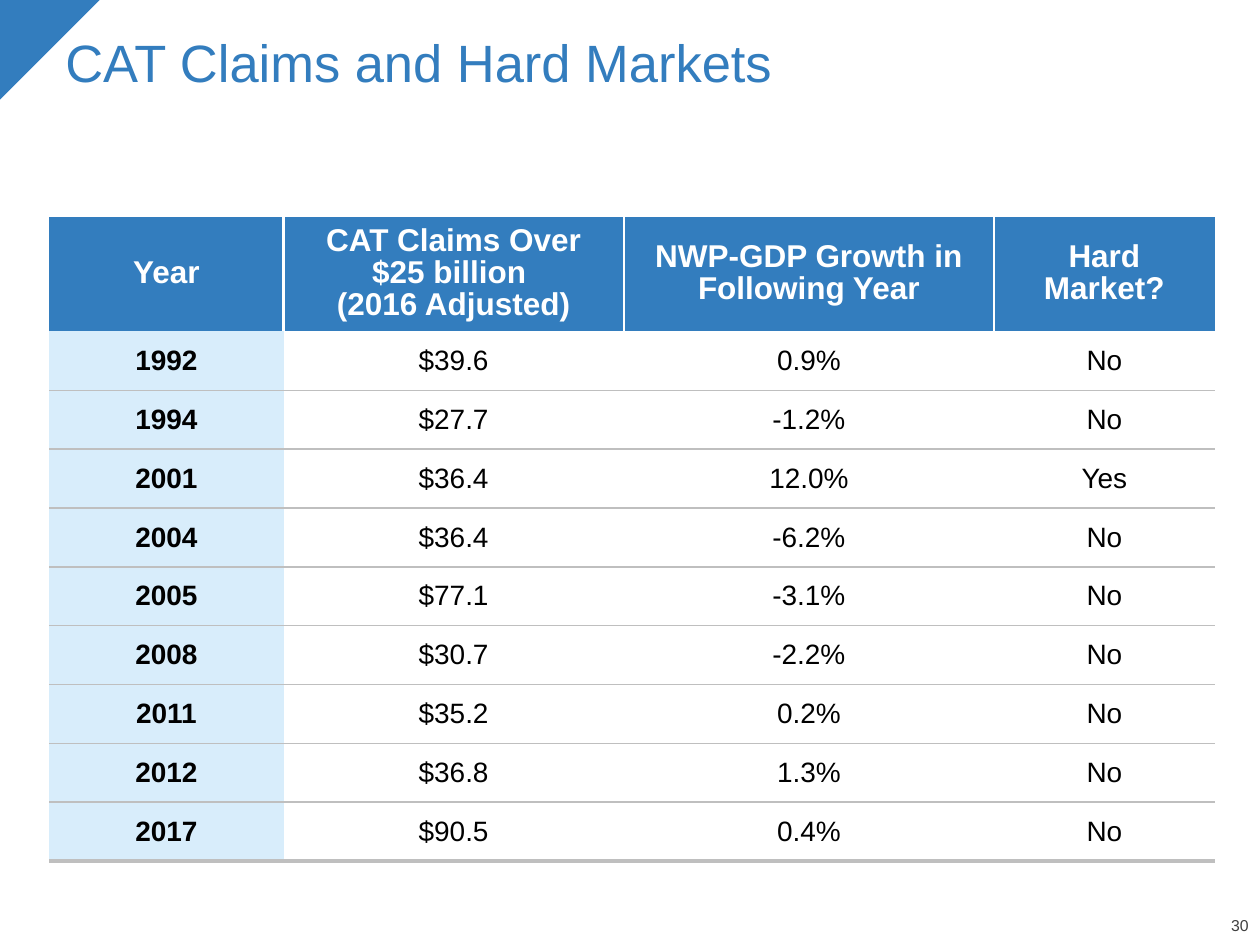
from lxml import etree
from pptx import Presentation
from pptx.dml.color import RGBColor
from pptx.enum.shapes import MSO_SHAPE
from pptx.enum.text import MSO_ANCHOR, PP_ALIGN
from pptx.oxml.ns import qn
from pptx.util import Inches, Pt

BLUE = RGBColor(0x33, 0x7D, 0xBE)
PALE_BLUE = RGBColor(0xD8, 0xED, 0xFB)
RULE_GRAY = RGBColor(0xBF, 0xBF, 0xBF)
PAGE_GRAY = RGBColor(0x40, 0x40, 0x40)
WHITE = RGBColor(0xFF, 0xFF, 0xFF)
BLACK = RGBColor(0, 0, 0)
PLAIN_TABLE = "{2D5ABB26-0587-4C30-8999-92F81FD0307C}"

HEADINGS = [
    "Year",
    "CAT Claims Over $25 billion \n(2016 Adjusted)",
    "NWP-GDP Growth in Following Year",
    "Hard Market?",
]
CLAIMS = [
    ("1992", "$39.6", "0.9%", "No"),
    ("1994", "$27.7", "-1.2%", "No"),
    ("2001", "$36.4", "12.0%", "Yes"),
    ("2004", "$36.4", "-6.2%", "No"),
    ("2005", "$77.1", "-3.1%", "No"),
    ("2008", "$30.7", "-2.2%", "No"),
    ("2011", "$35.2", "0.2%", "No"),
    ("2012", "$36.8", "1.3%", "No"),
    ("2017", "$90.5", "0.4%", "No"),
]


def write_text(frame, text, *, size, color, bold=False, align=PP_ALIGN.LEFT,
               spacing=None, font="Arial"):
    frame.word_wrap = True
    frame.text = text
    for paragraph in frame.paragraphs:
        paragraph.alignment = align
        paragraph.line_spacing = spacing
        for run in paragraph.runs:
            run.font.name = font
            run.font.size = Pt(size)
            run.font.bold = bold
            run.font.color.rgb = color


def set_borders(cell, borders):
    """Draw the given sides ({side: (color, points)}) and clear the others."""
    properties = cell._tc.get_or_add_tcPr()
    for side in "LRTB":
        color, points = borders.get(side, (None, 0))
        line = etree.SubElement(properties, qn(f"a:ln{side}"), w=str(Pt(points)))
        if color is None:
            etree.SubElement(line, qn("a:noFill"))
        else:
            fill = etree.SubElement(line, qn("a:solidFill"))
            etree.SubElement(fill, qn("a:srgbClr"), val=str(color))


class SlideBuilder:
    def __init__(self, slide):
        self.slide = slide

    def corner(self, left, top, side):
        triangle = self.slide.shapes.add_shape(
            MSO_SHAPE.RIGHT_TRIANGLE, Inches(left), Inches(top), Inches(side), Inches(side))
        triangle.rotation = 90
        triangle.shadow.inherit = False
        triangle.fill.solid()
        triangle.fill.fore_color.rgb = BLUE
        triangle.line.fill.background()

    def text(self, text, left, top, width, height, *, anchor=MSO_ANCHOR.TOP,
             inset=None, **style):
        box = self.slide.shapes.add_textbox(
            Inches(left), Inches(top), Inches(width), Inches(height))
        frame = box.text_frame
        frame.vertical_anchor = anchor
        if inset is not None:
            frame.margin_left = frame.margin_right = Inches(inset)
            frame.margin_top = frame.margin_bottom = Inches(inset)
        write_text(frame, text, spacing=0.9, **style)

    def table(self, left, top, height, widths, row_height, headings, records):
        holder = self.slide.shapes.add_table(
            len(records) + 1, len(widths), Inches(left), Inches(top),
            Inches(sum(widths)), Inches(height))
        table = holder.table
        table.horz_banding = False
        table._tbl.tblPr.find(qn("a:tableStyleId")).text = PLAIN_TABLE
        for column, width in zip(table.columns, widths):
            column.width = Inches(width)
        for row in table.rows:
            row.height = Inches(row_height)
        holder.height = Inches(height)

        # Header row, with white rules between the columns
        last_column = len(headings) - 1
        for index, heading in enumerate(headings):
            borders = {}
            if index > 0:
                borders["L"] = (WHITE, 1.5)
            if index < last_column:
                borders["R"] = (WHITE, 1.5)
            self.cell(table.cell(0, index), heading, borders, BLUE,
                      size=18, color=WHITE, bold=True, spacing=0.9)

        # Body rows, with gray rules and a shaded year column
        for number, record in enumerate(records, start=1):
            borders = {"B": (RULE_GRAY, 2.25 if number == len(records) else 1)}
            if number > 1:
                borders["T"] = (RULE_GRAY, 1)
            for index, value in enumerate(record):
                is_year = index == 0
                self.cell(table.cell(number, index), value, borders,
                          PALE_BLUE if is_year else None, inset=0.1,
                          size=16, color=BLACK, bold=is_year)

    def cell(self, cell, text, borders, fill, *, inset=None, **style):
        set_borders(cell, borders)
        if fill is None:
            cell.fill.background()
        else:
            cell.fill.solid()
            cell.fill.fore_color.rgb = fill
        if inset is not None:
            cell.margin_left = cell.margin_right = Inches(inset)
            cell.margin_top = cell.margin_bottom = Inches(inset)
        cell.vertical_anchor = MSO_ANCHOR.MIDDLE
        write_text(cell.text_frame, text, align=PP_ALIGN.CENTER, **style)


def main():
    deck = Presentation()
    deck.slide_width, deck.slide_height = Inches(10), Inches(7.5)
    builder = SlideBuilder(deck.slides.add_slide(deck.slide_layouts[6]))

    # Corner accent and page number
    builder.corner(-0.01, 0, 0.8)
    builder.text("30", 9.43, 7.29, 0.48, 0.13, anchor=MSO_ANCHOR.BOTTOM, inset=0,
                 size=9, color=PAGE_GRAY, align=PP_ALIGN.RIGHT)

    # Title
    builder.text("CAT Claims and Hard Markets", 0.42, 0.25, 9.25, 1.04,
                 size=30, color=BLUE)

    # Claims table
    builder.table(0.39, 1.72, 5.11, [1.86, 2.7, 2.94, 1.75], 0.41, HEADINGS, CLAIMS)

    deck.save("out.pptx")


if __name__ == "__main__":
    main()
